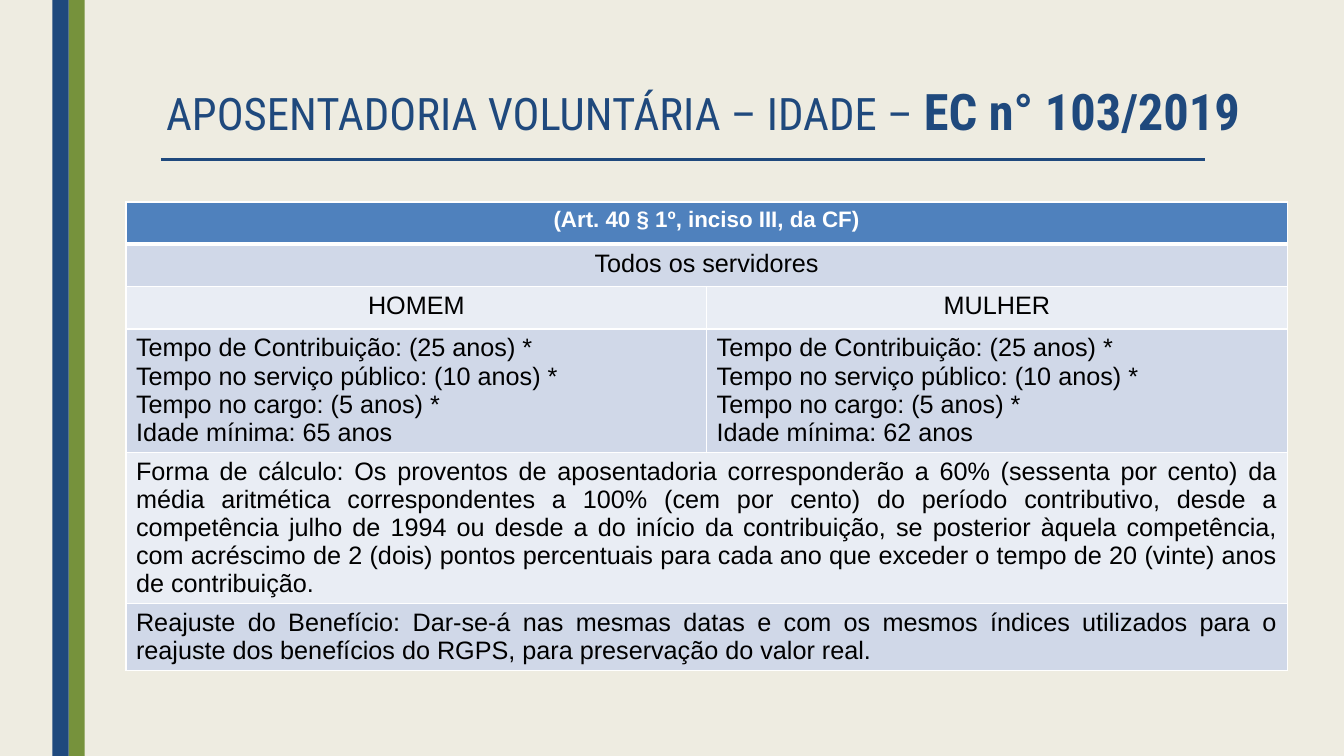
from lxml import etree
from pptx import Presentation
from pptx.dml.color import RGBColor
from pptx.enum.shapes import MSO_CONNECTOR, MSO_SHAPE
from pptx.enum.text import MSO_ANCHOR, MSO_AUTO_SIZE, PP_ALIGN
from pptx.oxml.ns import qn
from pptx.util import Pt

RECT = MSO_SHAPE.RECTANGLE
LINE = MSO_CONNECTOR.STRAIGHT
TOP = MSO_ANCHOR.TOP
FIXED = MSO_AUTO_SIZE.NONE
LEFT, MID, JUST = PP_ALIGN.LEFT, PP_ALIGN.CENTER, PP_ALIGN.JUSTIFY

NAVY, GREEN, CREAM = "1F497D", "76923C", "EEECE1"
BLUE, DARK, PALE = "4F81BD", "D0D8E8", "E9EDF4"
WHITE, BLACK = "FFFFFF", "000000"


def color(code):
    """Turn a hex string into a colour."""
    return RGBColor.from_string(code)


def terms(age):
    """List the conditions for a given minimum age."""
    return [
        "Tempo de Contribuição: (25 anos) *",
        "Tempo no serviço público: (10 anos) *",
        "Tempo no cargo: (5 anos) *",
        f"Idade mínima: {age} anos",
    ]


class Deck:
    """Hold the style and the current slide."""

    head = {"name": "Roboto Condensed", "size": Pt(32), "bold": False}
    strong = {**head, "size": Pt(36), "bold": True}
    body = {"name": "Arial", "size": Pt(18), "bold": False}
    label = {**body, "size": Pt(16), "bold": True}

    def __init__(self):
        """Open a wide slide with a plain background."""
        self.show = Presentation()
        self.show.slide_width, self.show.slide_height = Pt(960), Pt(540)
        self.slide = self.show.slides.add_slide(self.show.slide_layouts[5])
        self.paint(self.slide.background, CREAM)

    def paint(self, item, code):
        """Fill an item with one colour."""
        item.fill.solid()
        item.fill.fore_color.rgb = color(code)

    def text(self, para, words, style, code):
        """Add a styled run to a paragraph."""
        run = para.add_run()
        run.text = words
        for key, value in style.items():
            setattr(run.font, key, value)
        run.font.color.rgb = color(code)

    def title(self, box, parts):
        """Place the title and fill in its runs."""
        shape = self.slide.shapes.title
        for key, value in zip(("left", "top", "width", "height"), box):
            setattr(shape, key, Pt(value))
        frame = shape.text_frame
        frame.vertical_anchor, frame.auto_size = TOP, FIXED
        para = frame.paragraphs[0]
        para.alignment, para.line_spacing = LEFT, 0.89
        for words, style in parts:
            self.text(para, words, style, NAVY)

    def bar(self, box, code):
        """Draw a plain vertical bar."""
        shape = self.slide.shapes.add_shape(RECT, *map(Pt, box))
        shape.shadow.inherit = False
        self.paint(shape, code)
        shape.line.fill.background()

    def rule(self, ends, code, width):
        """Draw a straight line."""
        line = self.slide.shapes.add_connector(LINE, *map(Pt, ends))
        line.line.color.rgb = color(code)
        line.line.width = Pt(width)
        etree.SubElement(line._element.spPr, qn("a:effectLst"))

    def edge(self, cell, widths):
        """Give a cell its white borders."""
        props = cell._tc.get_or_add_tcPr()
        for spot, (side, width) in enumerate(widths.items()):
            line = etree.Element(qn(f"a:ln{side}"), w=str(Pt(width)))
            fill = etree.SubElement(line, qn("a:solidFill"))
            etree.SubElement(fill, qn("a:srgbClr"), val=WHITE)
            props.insert(spot, line)

    def table(self, box, sizes, rows):
        """Build the table; a row with one entry spans both columns."""
        frame = self.slide.shapes.add_table(len(rows), 2, *map(Pt, box))
        grid = frame.table
        for r, (size, entries) in enumerate(zip(sizes, rows)):
            grid.rows[r].height = Pt(size)
            if len(entries) == 1:
                grid.cell(r, 0).merge(grid.cell(r, 1))
            style, ink = (self.body, BLACK) if r else (self.label, WHITE)
            back = (DARK if r % 2 else PALE) if r else BLUE
            for c in range(2):
                cell = grid.cell(r, c)
                self.paint(cell, back)
                self.edge(cell, {"L": 1, "R": 1, "T": 3 if r == 1 else 1,
                                 "B": 1 if r else 3})
            for c, lines in enumerate(entries):
                area = grid.cell(r, c).text_frame
                for n, line in enumerate(lines):
                    para = area.add_paragraph() if n else area.paragraphs[0]
                    para.alignment = MID if r < 3 else JUST
                    self.text(para, line, style, ink)


def main():
    """Build the slide and save it."""
    deck = Deck()
    deck.bar((49, 0, 11.5, 540), GREEN)
    deck.bar((37.5, 0, 11.5, 540), NAVY)
    deck.rule((115, 113.75, 861, 113.75), NAVY, 2.25)
    deck.title((111.5, 59, 913, 57), [
        ("APOSENTADORIA VOLUNTÁRIA – IDADE – ", deck.head),
        ("EC n° 103/2019", deck.strong),
    ])
    deck.table((90, 144.25, 829.5, 334), (30.25, 30.25, 30.25, 88, 108, 48), [
        [["(Art. 40 § 1º, inciso III, da CF)"]],
        [["Todos os servidores"]],
        [["HOMEM"], ["MULHER"]],
        [terms(65), terms(62)],
        [["Forma de cálculo: Os proventos de aposentadoria corresponderão a "
          "60% (sessenta por cento) da média aritmética correspondentes a "
          "100% (cem por cento) do período contributivo, desde a competência "
          "julho de 1994 ou desde a do início da contribuição, se posterior "
          "àquela competência, com acréscimo de 2 (dois) pontos percentuais "
          "para cada ano que exceder o tempo de 20 (vinte) anos de "
          "contribuição."]],
        [["Reajuste do Benefício: Dar-se-á nas mesmas datas e com os mesmos "
          "índices utilizados para o reajuste dos benefícios do RGPS, para "
          "preservação do valor real."]],
    ])
    deck.show.save("out.pptx")


if __name__ == "__main__":
    main()
